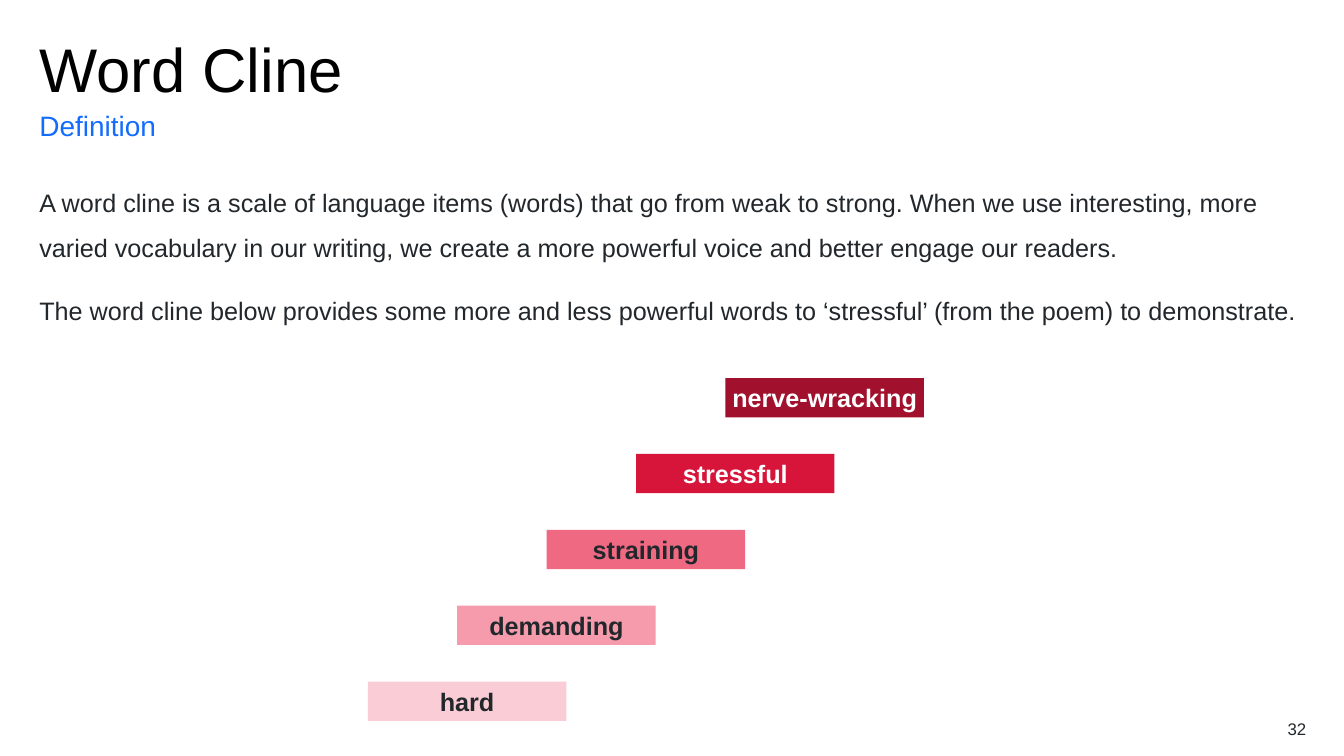
from pptx import Presentation
from pptx.dml.color import RGBColor
from pptx.enum.shapes import MSO_SHAPE as Shape
from pptx.enum.text import MSO_ANCHOR as Anchor, PP_ALIGN as Align
from pptx.util import Pt

INK = "22272B"
WHITE = "FFFFFF"
MARGIN = 28.1
CONTENT_WIDTH = 904.3


def color(hex_code):
    return RGBColor.from_string(hex_code)


class SlideBuilder:
    font = "Arial"

    def __init__(self, slide):
        self.slide = slide

    def fill_text(self, frame, paragraphs, size, ink, bold=False, align=Align.LEFT,
                  anchor=Anchor.TOP, spacing=1.0, after=0):
        frame.word_wrap = True
        frame.vertical_anchor = anchor
        frame.margin_left = frame.margin_right = Pt(0)
        frame.margin_top = frame.margin_bottom = Pt(0)
        frame.text = "\n".join(paragraphs)
        for paragraph in frame.paragraphs:
            paragraph.alignment = align
            paragraph.line_spacing = spacing
            paragraph.space_after = Pt(after)
            for run in paragraph.runs:
                run.font.name = self.font
                run.font.size = Pt(size)
                run.font.bold = bold
                run.font.color.rgb = color(ink)

    def text(self, left, top, width, height, paragraphs, size, ink, **style):
        box = self.slide.shapes.add_textbox(Pt(left), Pt(top), Pt(width), Pt(height))
        self.fill_text(box.text_frame, paragraphs, size, ink, **style)

    def label(self, left, top, width, height, word, fill, ink):
        bar = self.slide.shapes.add_shape(
            Shape.RECTANGLE, Pt(left), Pt(top), Pt(width), Pt(height))
        bar.shadow.inherit = False
        bar.fill.solid()
        bar.fill.fore_color.rgb = color(fill)
        bar.line.fill.background()
        self.fill_text(bar.text_frame, [word], 18, ink, bold=True,
                       align=Align.CENTER, anchor=Anchor.MIDDLE)


def main():
    deck = Presentation()
    deck.slide_width, deck.slide_height = Pt(960), Pt(540)
    page = SlideBuilder(deck.slides.add_slide(deck.slide_layouts[6]))

    page.text(MARGIN, 28.1, CONTENT_WIDTH, 43.2, ["Word Cline"], 44, "000000", spacing=0.9)
    page.text(MARGIN, 77, CONTENT_WIDTH, 24.5, ["Definition"], 20, "146CFD",
              anchor=Anchor.BOTTOM, spacing=1.5, after=12)

    definition = [
        "A word cline is a scale of language items (words) that go from weak to strong. "
        "When we use interesting, more varied vocabulary in our writing, we create a more "
        "powerful voice and better engage our readers.",
        "The word cline below provides some more and less powerful words to ‘stressful’ "
        "(from the poem) to demonstrate.",
    ]
    page.text(MARGIN, 123.1, CONTENT_WIDTH, 110.9, definition, 18, INK, spacing=1.5, after=12)

    cline = [
        ("nerve-wracking", "A1102C", WHITE),
        ("stressful", "D7153A", WHITE),
        ("straining", "F06983", INK),
        ("demanding", "F59BAC", INK),
        ("hard", "FACDD6", INK),
    ]
    for step, (word, fill, ink) in enumerate(cline):
        page.label(518.2 - 63.85 * step, 270 + 54.2 * step, 141.8, 28.1, word, fill, ink)

    page.text(876.2, 513.4, 56.9, 14.4, ["32"], 12, INK, align=Align.RIGHT)
    deck.save("out.pptx")


if __name__ == "__main__":
    main()
